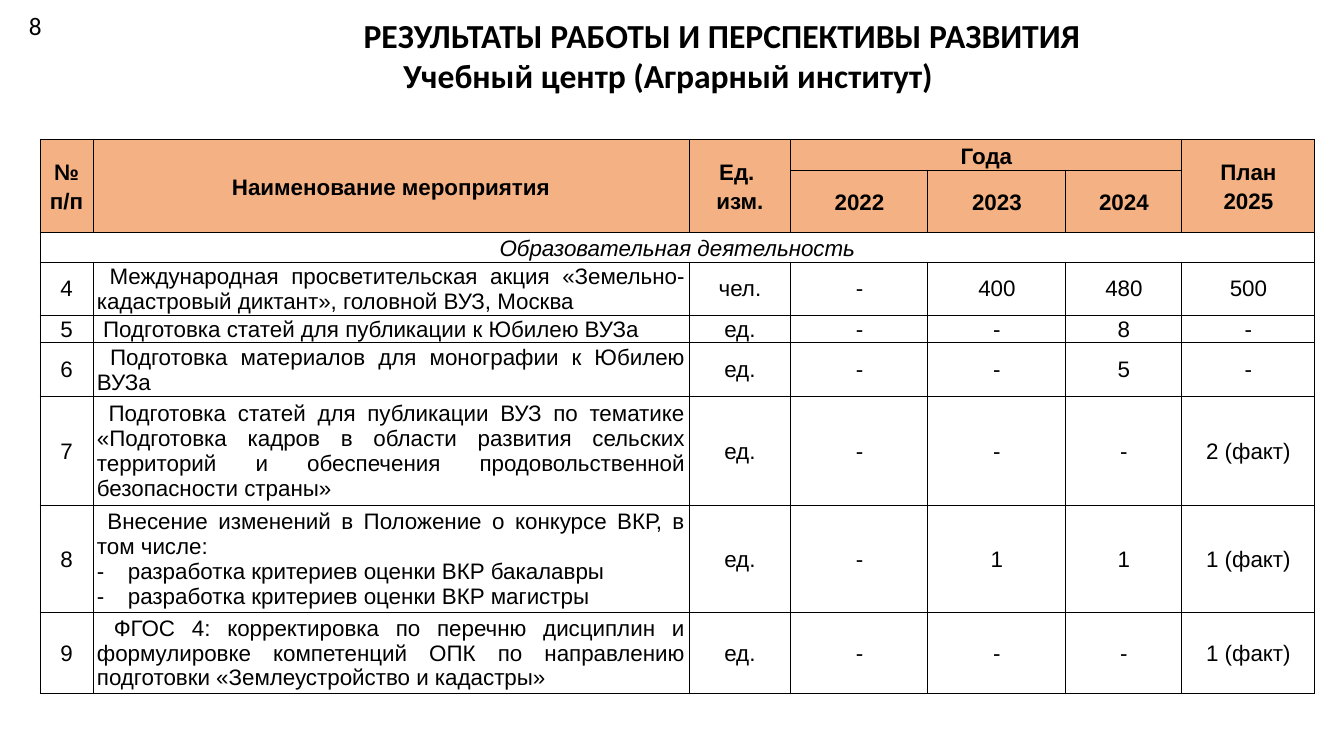
from lxml.etree import SubElement
from pptx import Presentation
from pptx.dml.color import RGBColor
from pptx.enum.text import MSO_ANCHOR, PP_ALIGN
from pptx.oxml.ns import qn
from pptx.util import Emu, Pt

LEFT, CENTER, JUSTIFY = PP_ALIGN.LEFT, PP_ALIGN.CENTER, PP_ALIGN.JUSTIFY
HEADER_FILL = "F4B183"
COLS = [53, 596, 102, 137, 138, 116, 133]
ROWS = [31, 62, 30, 54, 27, 54, 109, 107, 81]
HEADER = [
    (0, 0, 1, 0, "№\nп/п"),
    (0, 1, 1, 1, "Наименование мероприятия"),
    (0, 2, 1, 2, "Ед. \nизм."),
    (0, 3, 0, 5, "Года"),
    (0, 6, 1, 6, "План\n2025"),
    (1, 3, 1, 3, "2022"),
    (1, 4, 1, 4, "2023"),
    (1, 5, 1, 5, "2024"),
]
SECTION = "Образовательная деятельность"
EVENTS = [
    ("4", " Международная просветительская акция «Земельно-кадастровый диктант», "
     "головной ВУЗ, Москва", "чел.", "-", "400", "480", "500"),
    ("5", " Подготовка статей для публикации к Юбилею ВУЗа",
     "ед.", "-", "-", "8", "-"),
    ("6", " Подготовка материалов для монографии к Юбилею ВУЗа",
     "ед.", "-", "-", "5", "-"),
    ("7", " Подготовка статей для публикации ВУЗ по тематике «Подготовка кадров "
     "в области развития сельских территорий и обеспечения продовольственной "
     "безопасности страны»", "ед.", "-", "-", "-", "2 (факт)"),
    ("8", " Внесение изменений в Положение о конкурсе ВКР, в том числе:\n"
     "- разработка критериев оценки ВКР бакалавры\n"
     "- разработка критериев оценки ВКР магистры",
     "ед.", "-", "1", "1", "1 (факт)"),
    ("9", " ФГОС 4: корректировка по перечню дисциплин и формулировке компетенций "
     "ОПК по направлению подготовки «Землеустройство и кадастры»",
     "ед.", "-", "-", "-", "1 (факт)"),
]


def px(n):
    """Turn whole pixels into EMU."""
    return Emu(round(n * 914400 / 100.8))


def rgb(color):
    """Turn a hex string into a colour."""
    return RGBColor.from_string(color)


def indent(p, left, first=0):
    """Set the left margin and the first-line indent of a paragraph."""
    pPr = p._p.get_or_add_pPr()
    pPr.set("marL", str(px(left)))
    pPr.set("indent", str(px(first)))
    return pPr


def write(tf, text, size=16, font="Arial", color="000000", bold=False,
          italic=False, align=CENTER, spacing=1.0):
    """Write one paragraph per line, with a bullet where a line starts with a dash."""
    for i, line in enumerate(text.split("\n")):
        p = tf.paragraphs[0] if i == 0 else tf.add_paragraph()
        p.alignment, p.line_spacing = align, spacing
        if line.startswith("- "):
            line = line[2:]
            pPr = indent(p, 31, -31)
            SubElement(pPr, qn("a:buFont"), typeface=font)
            SubElement(pPr, qn("a:buChar"), char="-")
        r = p.add_run()
        r.text = line
        f = r.font
        f.size, f.name, f.bold, f.italic = Pt(size), font, bold, italic
        f.color.rgb = rgb(color)


def add_title(s, x, y, w, h):
    """Place the two-line heading."""
    sp = s.shapes.title
    sp.left, sp.top, sp.width, sp.height = px(x), px(y), px(w), px(h)
    tf = sp.text_frame
    tf.word_wrap, tf.vertical_anchor = True, MSO_ANCHOR.MIDDLE
    write(tf, "РЕЗУЛЬТАТЫ РАБОТЫ И ПЕРСПЕКТИВЫ РАЗВИТИЯ\n"
          "Учебный центр (Аграрный институт) ", size=24, font="Calibri", bold=True)
    for p, left in zip(tf.paragraphs, (100, 0)):
        indent(p, left)


def add_page_number(s, x, y, w, h):
    """Place the page number."""
    sp = s.shapes.add_textbox(px(x), px(y), px(w), px(h))
    sp.text_frame.word_wrap = False
    write(sp.text_frame, "8", size=18, font="Calibri", align=LEFT)


def format_cell(cell, fill=None):
    """Give a cell its margins, black borders and fill."""
    cell.margin_left = cell.margin_right = px(4)
    cell.margin_top = cell.margin_bottom = 0
    cell.vertical_anchor = MSO_ANCHOR.MIDDLE
    tcPr = cell._tc.get_or_add_tcPr()
    for side in ("lnL", "lnR", "lnT", "lnB"):
        ln = SubElement(tcPr, qn(f"a:{side}"), w=str(Pt(0.75)))
        SubElement(SubElement(ln, qn("a:solidFill")), qn("a:srgbClr"), val="000000")
    if fill:
        cell.fill.solid()
        cell.fill.fore_color.rgb = rgb(fill)
    else:
        cell.fill.background()


def add_results_table(s, x, y):
    """Place the table of events by year."""
    table = s.shapes.add_table(len(ROWS), len(COLS), px(x), px(y),
                               px(sum(COLS)), px(sum(ROWS))).table
    table.first_row = table.horz_banding = False
    for col, w in zip(table.columns, COLS):
        col.width = px(w)
    for i, (row, h) in enumerate(zip(table.rows, ROWS)):
        row.height = px(h)
        for cell in row.cells:
            format_cell(cell, HEADER_FILL if i < 2 else None)
    for top, left, bottom, right, text in HEADER:
        cell = table.cell(top, left)
        if (top, left) != (bottom, right):
            cell.merge(table.cell(bottom, right))
        write(cell.text_frame, text, bold=True, spacing=1.15)
    section = table.cell(2, 0)
    section.merge(table.cell(2, len(COLS) - 1))
    write(section.text_frame, SECTION, italic=True, spacing=1.15)
    for i, event in enumerate(EVENTS, start=3):
        for j, text in enumerate(event):
            write(table.cell(i, j).text_frame, text,
                  align=JUSTIFY if j == 1 else CENTER)


def main():
    """Build the slide and save it."""
    prs = Presentation()
    prs.slide_width, prs.slide_height = px(1344), px(756)
    s = prs.slides.add_slide(prs.slide_layouts[5])
    add_title(s, 0, 9, 1344, 92)
    add_results_table(s, 40, 139)
    add_page_number(s, 19, 5, 33, 40)
    prs.save("out.pptx")


if __name__ == "__main__":
    main()
